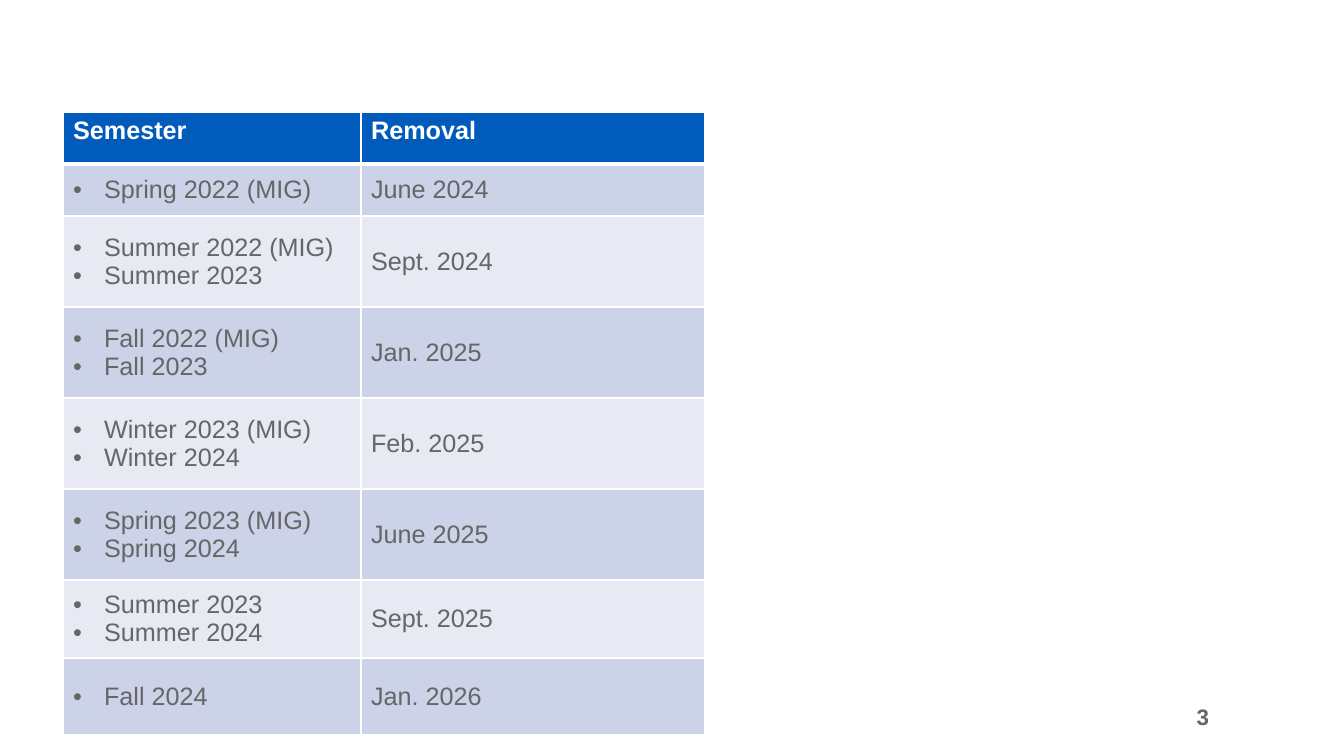
from lxml import etree
from pptx import Presentation
from pptx import util as u
from pptx.dml.color import RGBColor
from pptx.enum import text
from pptx.oxml import ns

HEADERS = ["Semester", "Removal"]
SCHEDULE = [
    (["Spring 2022 (MIG)"], "June 2024"),
    (["Summer 2022 (MIG)", "Summer 2023"], "Sept. 2024"),
    (["Fall 2022 (MIG)", "Fall 2023"], "Jan. 2025"),
    (["Winter 2023 (MIG)", "Winter 2024"], "Feb. 2025"),
    (["Spring 2023 (MIG)", "Spring 2024"], "June 2025"),
    (["Summer 2023", "Summer 2024"], "Sept. 2025"),
    (["Fall 2024"], "Jan. 2026"),
]
PAGE_NUMBER = "3"

COLORS = {
    "header": "005BBB",
    "odd": "CCD2E7",
    "even": "E7EAF3",
    "white": "FFFFFF",
    "gray": "666666",
}
FONT = "Arial"
SLIDE_SIZE = (1344, 756)
TABLE_LEFT, TABLE_TOP = 63, 112
COLUMN_WIDTHS = [298, 344]
ROW_HEIGHTS = [52, 52, 91, 91, 91, 91, 78, 77]
PAGE_NUMBER_BOX = (765, 697, 454, 40)
BULLET_INDENT = 31


def px(length):
    return u.Emu(round(length * 914400 / 100.8))


def format_font(paragraph, size, color, bold):
    for run in paragraph.runs:
        run.font.name = FONT
        run.font.size = u.Pt(size)
        run.font.bold = bold
        run.font.color.rgb = RGBColor.from_string(COLORS[color])


def add_bullet(paragraph):
    properties = paragraph._p.get_or_add_pPr()
    properties.set("marL", str(px(BULLET_INDENT)))
    properties.set("indent", str(-px(BULLET_INDENT)))
    etree.SubElement(properties, ns.qn("a:buFont"), typeface=FONT)
    etree.SubElement(properties, ns.qn("a:buChar"), char="•")


def set_borders(cell, top, bottom):
    properties = cell._tc.get_or_add_tcPr()
    widths = {"a:lnL": 1, "a:lnR": 1, "a:lnT": top, "a:lnB": bottom}
    for position, (tag, width) in enumerate(widths.items()):
        line = etree.Element(ns.qn(tag), w=str(u.Pt(width)))
        fill = etree.SubElement(line, ns.qn("a:solidFill"))
        etree.SubElement(fill, ns.qn("a:srgbClr"), val=COLORS["white"])
        properties.insert(position, line)


def fill_cell(cell, lines, row, bulleted):
    is_header = row == 0
    cell.text_frame.text = "\n".join(lines)
    for paragraph in cell.text_frame.paragraphs:
        if bulleted:
            add_bullet(paragraph)
        format_font(paragraph, 18, "white" if is_header else "gray", is_header)
    anchor = text.MSO_ANCHOR
    cell.vertical_anchor = anchor.TOP if is_header else anchor.MIDDLE
    band = "header" if is_header else ("odd" if row % 2 else "even")
    cell.fill.solid()
    cell.fill.fore_color.rgb = RGBColor.from_string(COLORS[band])
    set_borders(cell, 3 if row == 1 else 1, 3 if is_header else 1)


def add_schedule(slide):
    rows = [([HEADERS[0]], HEADERS[1])] + SCHEDULE
    table = slide.shapes.add_table(
        len(rows), len(HEADERS), px(TABLE_LEFT), px(TABLE_TOP),
        px(sum(COLUMN_WIDTHS)), px(sum(ROW_HEIGHTS))).table
    for column, width in zip(table.columns, COLUMN_WIDTHS):
        column.width = px(width)
    for row, (semesters, removal) in enumerate(rows):
        table.rows[row].height = px(ROW_HEIGHTS[row])
        fill_cell(table.cell(row, 0), semesters, row, row > 0)
        fill_cell(table.cell(row, 1), [removal], row, False)


def add_page_number(slide):
    shape = slide.shapes.add_textbox(*map(px, PAGE_NUMBER_BOX))
    frame = shape.text_frame
    frame.word_wrap = True
    frame.vertical_anchor = text.MSO_ANCHOR.MIDDLE
    frame.text = PAGE_NUMBER
    paragraph = frame.paragraphs[0]
    paragraph.alignment = text.PP_ALIGN.RIGHT
    format_font(paragraph, 16, "gray", True)


def main():
    presentation = Presentation()
    presentation.slide_width, presentation.slide_height = map(px, SLIDE_SIZE)
    slide = presentation.slides.add_slide(presentation.slide_layouts[6])
    add_page_number(slide)
    add_schedule(slide)
    presentation.save("out.pptx")


if __name__ == "__main__":
    main()
